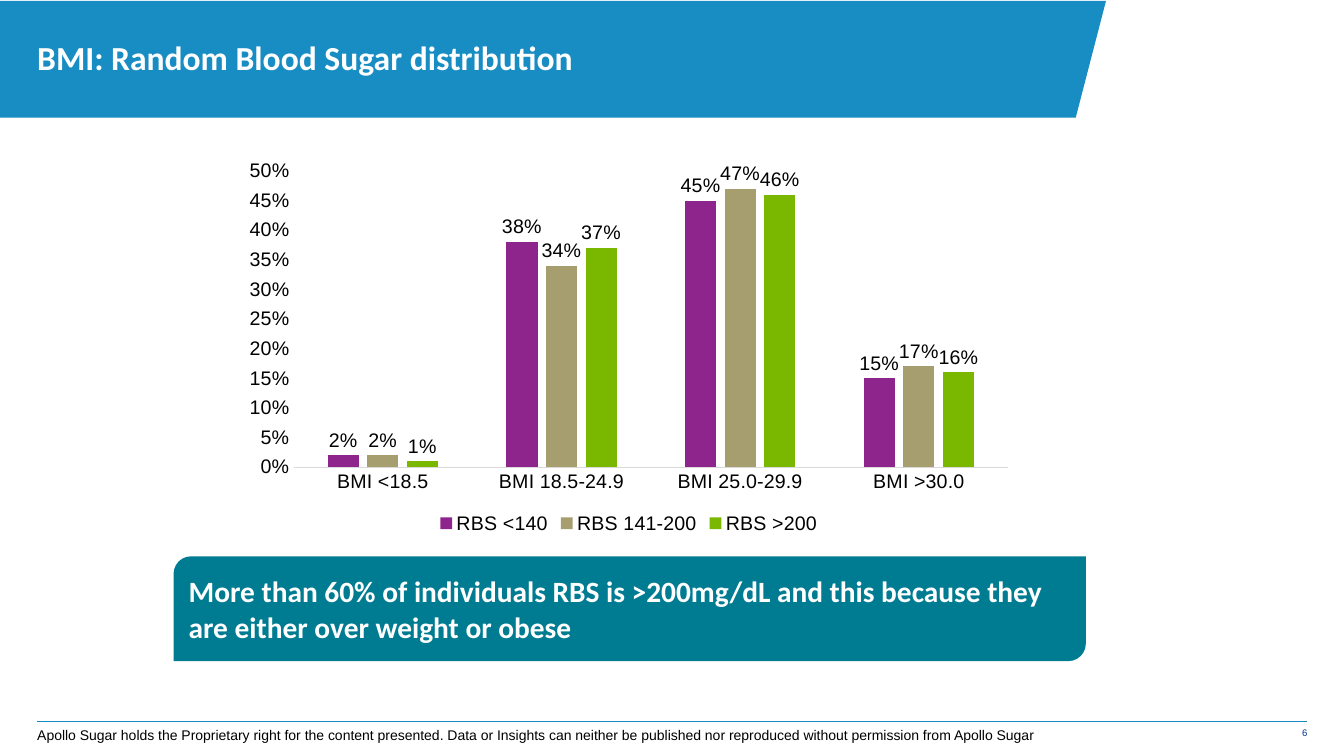
import pptx
import pptx.chart.data
import pptx.dml.color
import pptx.enum.chart
import pptx.enum.shapes
import pptx.enum.text
import pptx.oxml.ns
import pptx.util
from lxml import etree

Pt = pptx.util.Pt
RGBColor = pptx.dml.color.RGBColor

WHITE = RGBColor(0xFF, 0xFF, 0xFF)
BLACK = RGBColor(0x00, 0x00, 0x00)
BLUE = RGBColor(0x18, 0x8D, 0xC3)
NAVY = RGBColor(0x00, 0x33, 0x8D)
TEAL = RGBColor(0x00, 0x7C, 0x92)
GREY = RGBColor(0xD9, 0xD9, 0xD9)
PURPLE = RGBColor(0x8E, 0x25, 0x8D)
KHAKI = RGBColor(0xA7, 0x9E, 0x70)
GREEN = RGBColor(0x7A, 0xB8, 0x00)

BMI_GROUPS = ["BMI <18.5", "BMI 18.5-24.9", "BMI 25.0-29.9", "BMI >30.0"]
SUGAR_LEVELS = [
    ("RBS <140", PURPLE, [0.02, 0.38, 0.45, 0.15]),
    ("RBS 141-200", KHAKI, [0.02, 0.34, 0.47, 0.17]),
    ("RBS >200", GREEN, [0.01, 0.37, 0.46, 0.16]),
]
TITLE = "BMI: Random Blood Sugar distribution"
MESSAGE = ("More than 60% of individuals RBS is >200mg/dL and this because "
           "they are either over weight or obese")
RIGHTS = ("Apollo Sugar holds the Proprietary right for the content presented. "
          "Data or Insights can neither be published nor reproduced without "
          "permission from Apollo Sugar")


def set_font(font, name, size, color, bold=False):
    font.name = name
    font.size = Pt(size)
    font.color.rgb = color
    font.bold = bold


def remove_margins(text_frame):
    text_frame.margin_left = text_frame.margin_right = 0
    text_frame.margin_top = text_frame.margin_bottom = 0


def add_header(slide, left, top, width, height):
    # Slanted band
    right, bottom = left + width, top + height
    builder = slide.shapes.build_freeform(Pt(left), Pt(top))
    builder.add_line_segments([
        (Pt(right), Pt(top)),
        (Pt(right - 21.6), Pt(bottom)),
        (Pt(left), Pt(bottom)),
    ])
    band = builder.convert_to_shape()
    band.shadow.inherit = False
    band.fill.solid()
    band.fill.fore_color.rgb = BLUE
    band.line.fill.background()

    # Title, brought in front of the band
    title = slide.shapes.title
    band.element.addnext(title.element)
    title.left, title.top = Pt(left + 26.6), Pt(top + 8.6)
    title.width, title.height = Pt(width - 41), Pt(62.6)
    text_frame = title.text_frame
    remove_margins(text_frame)
    text_frame.auto_size = pptx.enum.text.MSO_AUTO_SIZE.NONE
    text_frame.vertical_anchor = pptx.enum.text.MSO_ANCHOR.MIDDLE
    text_frame.text = TITLE
    paragraph = text_frame.paragraphs[0]
    paragraph.alignment = pptx.enum.text.PP_ALIGN.LEFT
    set_font(paragraph.font, "Calibri", 24, WHITE, True)


def add_distribution_chart(slide, left, top, width, height):
    data = pptx.chart.data.CategoryChartData(number_format="0%")
    data.categories = BMI_GROUPS
    for name, _, shares in SUGAR_LEVELS:
        data.add_series(name, shares)
    chart = slide.shapes.add_chart(
        pptx.enum.chart.XL_CHART_TYPE.COLUMN_CLUSTERED,
        Pt(left), Pt(top), Pt(width), Pt(height), data).chart
    set_font(chart.font, "Arial", 14, BLACK)
    chart.has_title = False
    chart.has_legend = True
    chart.legend.position = pptx.enum.chart.XL_LEGEND_POSITION.BOTTOM
    chart.legend.include_in_layout = False

    # Axes
    for axis in (chart.category_axis, chart.value_axis):
        axis.major_tick_mark = pptx.enum.chart.XL_TICK_MARK.NONE
        axis.has_major_gridlines = False
    chart.category_axis.format.line.color.rgb = GREY
    chart.category_axis.format.line.width = Pt(0.75)
    chart.value_axis.format.line.fill.background()
    chart.value_axis.minimum_scale = 0
    chart.value_axis.maximum_scale = 0.5
    chart.value_axis.major_unit = 0.05
    chart.value_axis.tick_labels.number_format = "0%"
    chart.value_axis.tick_labels.number_format_is_linked = False

    # Columns and their labels
    plot = chart.plots[0]
    plot.vary_by_categories = False
    plot.gap_width = 219
    plot.overlap = -27
    for series, (_, color, _) in zip(plot.series, SUGAR_LEVELS):
        series.format.fill.solid()
        series.format.fill.fore_color.rgb = color
        labels = series.data_labels
        labels.show_value = True
        labels.number_format = "0%"
        labels.number_format_is_linked = False
        labels.position = pptx.enum.chart.XL_LABEL_POSITION.OUTSIDE_END
        set_font(labels.font, "Arial", 14, BLACK)


def add_message(slide, left, top, width, height):
    callout = slide.shapes.add_shape(
        pptx.enum.shapes.MSO_SHAPE.ROUND_2_DIAG_RECTANGLE,
        Pt(left), Pt(top), Pt(width), Pt(height))
    callout.shadow.inherit = False
    callout.fill.solid()
    callout.fill.fore_color.rgb = TEAL
    callout.line.fill.background()
    text_frame = callout.text_frame
    text_frame.word_wrap = True
    text_frame.vertical_anchor = pptx.enum.text.MSO_ANCHOR.MIDDLE
    text_frame.text = MESSAGE
    paragraph = text_frame.paragraphs[0]
    paragraph.alignment = pptx.enum.text.PP_ALIGN.LEFT
    set_font(paragraph.font, "Calibri", 21, WHITE, True)


def add_footer(slide, left, top, width, height):
    # Rule
    right = left + width
    rule = slide.shapes.add_connector(
        pptx.enum.shapes.MSO_CONNECTOR.STRAIGHT,
        Pt(left), Pt(top), Pt(right), Pt(top))
    rule.line.color.rgb = BLUE
    rule.line.width = Pt(0.25)
    etree.SubElement(rule.element.spPr, pptx.oxml.ns.qn("a:effectLst"))

    # Rights notice and slide number
    number_width = 49
    align = pptx.enum.text.PP_ALIGN
    for text, x, box_width, offset, size, color, alignment in (
            (RIGHTS, left, width - number_width, 4.3, 10, BLACK, align.LEFT),
            ("6", right - number_width, number_width, 4.3, 6.8, NAVY, align.RIGHT)):
        box = slide.shapes.add_textbox(
            Pt(x), Pt(top + offset), Pt(box_width), Pt(height - offset))
        text_frame = box.text_frame
        remove_margins(text_frame)
        text_frame.word_wrap = True
        text_frame.text = text
        paragraph = text_frame.paragraphs[0]
        paragraph.alignment = alignment
        set_font(paragraph.font, "Arial", size, color)


def main():
    presentation = pptx.Presentation()
    presentation.slide_width = Pt(960)
    presentation.slide_height = Pt(540)
    slide = presentation.slides.add_slide(presentation.slide_layouts[5])
    add_header(slide, 0, 0.7, 790, 83.3)
    add_distribution_chart(slide, 167, 108.7, 564.5, 275.8)
    add_message(slide, 124, 397.4, 651.6, 74.9)
    add_footer(slide, 26.6, 514.8, 907.2, 22)
    presentation.save("out.pptx")


if __name__ == "__main__":
    main()
